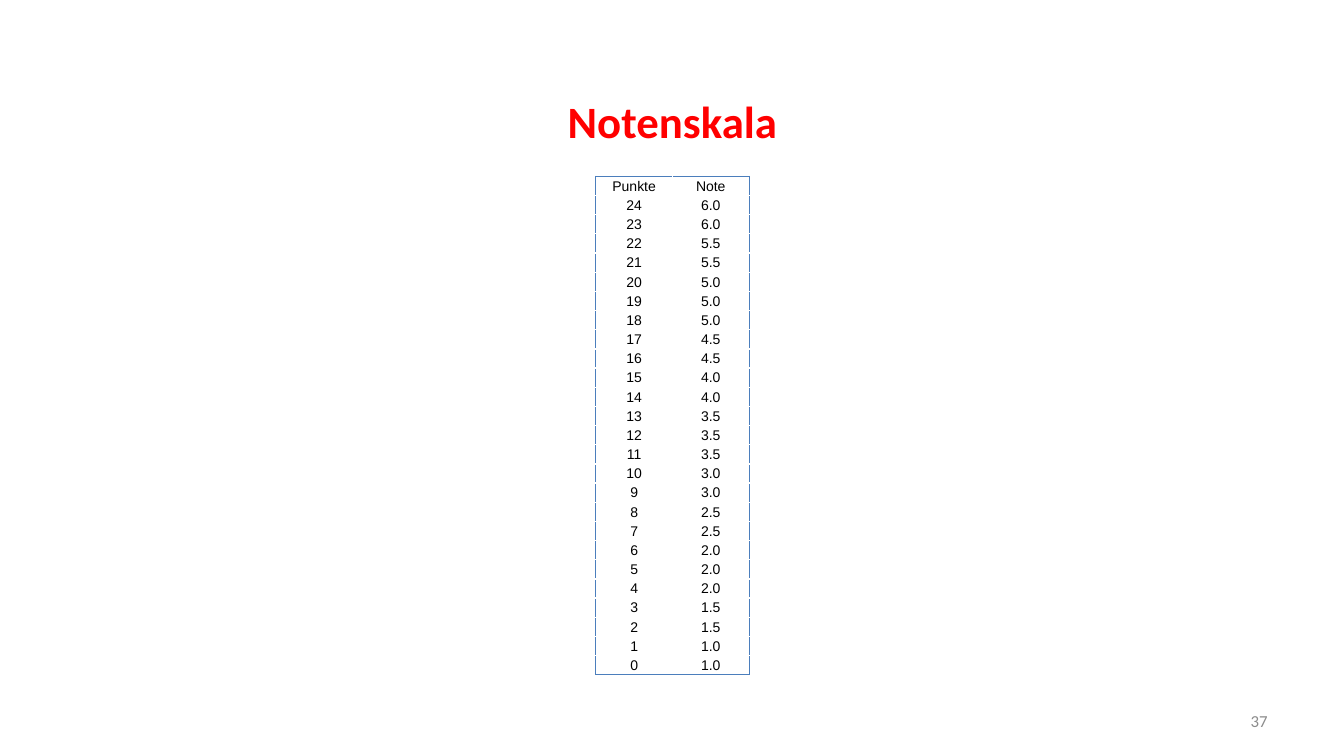
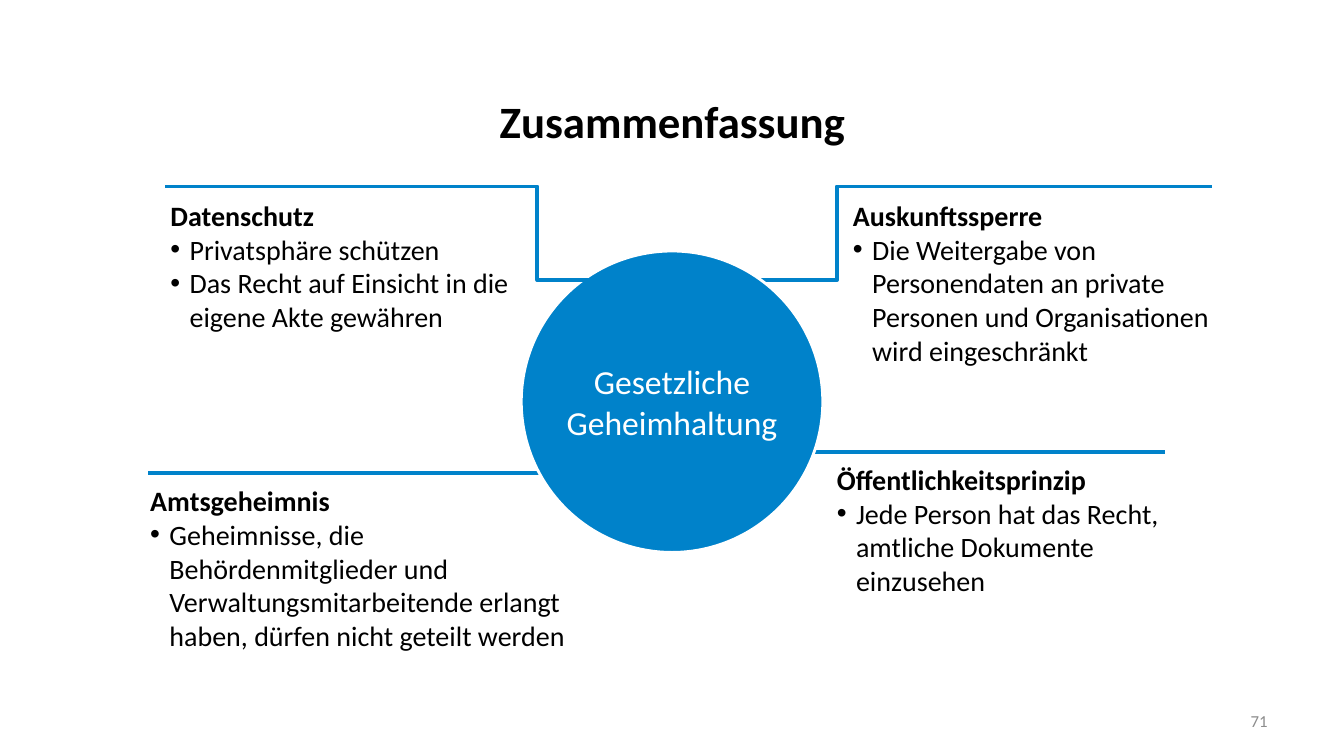
from dataclasses import dataclass

from lxml.etree import SubElement
from pptx import Presentation
from pptx.dml.color import RGBColor as RGB
from pptx.enum.shapes import MSO_CONNECTOR as LINK, MSO_SHAPE as SHAPE
from pptx.enum.text import MSO_ANCHOR as ANCHOR, MSO_AUTO_SIZE as FIT, PP_ALIGN as ALIGN
from pptx.oxml.ns import qn
from pptx.util import Pt

PX = 9144
COMPARISON_LAYOUT, TITLE_ONLY_LAYOUT = 4, 5


@dataclass(frozen=True)
class Theme:
    font: str = "Calibri"
    table_font: str = "Arial"
    black: str = "000000"
    white: str = "FFFFFF"
    red: str = "FF0000"
    blue: str = "0082CA"
    border: str = "4B7EBC"
    grey: str = "8C8C8C"
    title_size: int = 32
    hub_size: int = 24
    body_size: int = 20
    number_size: int = 12
    table_size: int = 10
    line_width: float = 2.75
    border_width: float = 0.75


THEME = Theme()

GRADES = [
    "6.0", "6.0", "5.5", "5.5", "5.0", "5.0", "5.0", "4.5", "4.5",
    "4.0", "4.0", "3.5", "3.5", "3.5", "3.0", "3.0", "2.5", "2.5",
    "2.0", "2.0", "2.0", "1.5", "1.5", "1.0", "1.0",
]

TOPICS = [
    ((159, 192, 366, 175), "Datenschutz",
     ["Privatsphäre schützen", "Das Recht auf Einsicht in die eigene Akte gewähren"]),
    ((836, 192, 382, 254), "Auskunftssperre",
     ["Die Weitergabe von Personendaten an private Personen und Organisationen "
      "wird eingeschränkt"]),
    ((139, 475, 457, 206), "Amtsgeheimnis",
     ["Geheimnisse, die Behördenmitglieder und Verwaltungsmitarbeitende erlangt "
      "haben, dürfen nicht geteilt werden"]),
    ((820, 454, 366, 175), "Öffentlichkeitsprinzip",
     ["Jede Person hat das Recht, amtliche Dokumente einzusehen"]),
]

LINKS_BEHIND_HUB = [
    (LINK.STRAIGHT, (147, 469, 576, 469)),
    (LINK.STRAIGHT, (730, 448, 1155, 448)),
    (LINK.ELBOW, (974, 185, 686, 278)),
]
LINKS_OVER_HUB = [
    (LINK.STRAIGHT, (874, 185, 1202, 185)),
    (LINK.ELBOW, (419, 185, 647, 278)),
    (LINK.STRAIGHT, (164, 185, 492, 185)),
]


def scaled(lengths):
    return [length * PX for length in lengths]


def place(shape, box):
    shape.left, shape.top, shape.width, shape.height = scaled(box)


def style_paragraph(paragraph, size, color, bold=False, align=ALIGN.LEFT, font=THEME.font):
    paragraph.alignment = align
    paragraph.space_before = Pt(0)
    for run in paragraph.runs:
        run.font.name = font
        run.font.size = Pt(size)
        run.font.bold = bold
        run.font.color.rgb = RGB.from_string(color)


def set_bullet(paragraph, bulleted):
    properties = paragraph._p.get_or_add_pPr()
    indent = 19 * PX if bulleted else 0
    properties.set("marL", str(indent))
    properties.set("indent", str(-indent))
    if bulleted:
        SubElement(properties, qn("a:buFont"), typeface="Arial")
        SubElement(properties, qn("a:buChar"), char="•")
    else:
        SubElement(properties, qn("a:buNone"))


def add_slide(deck, layout, title, title_color, number):
    slide = deck.slides.add_slide(deck.slide_layouts[layout])
    heading = slide.shapes.title
    place(heading, (67, 84, 1200, 71))
    heading.text_frame.text = title
    heading.text_frame.vertical_anchor = ANCHOR.MIDDLE
    style_paragraph(heading.text_frame.paragraphs[0], THEME.title_size, title_color,
                    bold=True, align=ALIGN.CENTER)

    footer = slide.shapes.add_textbox(*scaled((956, 695, 311, 40))).text_frame
    footer.word_wrap = True
    footer.vertical_anchor = ANCHOR.MIDDLE
    footer.text = str(number)
    style_paragraph(footer.paragraphs[0], THEME.number_size, THEME.grey, align=ALIGN.RIGHT)
    return slide


def fill_topic(holder, box, heading, points):
    place(holder, box)
    frame = holder.text_frame
    frame.text = "\n".join([heading, *points])
    frame.word_wrap = True
    frame.auto_size = FIT.NONE
    frame.vertical_anchor = ANCHOR.TOP
    for index, paragraph in enumerate(frame.paragraphs):
        set_bullet(paragraph, bulleted=index > 0)
        style_paragraph(paragraph, THEME.body_size, THEME.black, bold=index == 0)


def add_link(slide, kind, ends):
    link = slide.shapes.add_connector(kind, *scaled(ends))
    link.line.color.rgb = RGB.from_string(THEME.blue)
    link.line.width = Pt(THEME.line_width)
    SubElement(link._element.spPr, qn("a:effectLst"))


def add_hub(slide, box, label):
    hub = slide.shapes.add_shape(SHAPE.OVAL, *scaled(box))
    hub.shadow.inherit = False
    hub.fill.solid()
    hub.fill.fore_color.rgb = RGB.from_string(THEME.blue)
    hub.line.color.rgb = RGB.from_string(THEME.white)
    hub.line.width = Pt(2)
    frame = hub.text_frame
    frame.margin_left = frame.margin_right = frame.margin_top = frame.margin_bottom = 0
    frame.word_wrap = True
    frame.vertical_anchor = ANCHOR.MIDDLE
    frame.text = label
    style_paragraph(frame.paragraphs[0], THEME.hub_size, THEME.white, align=ALIGN.CENTER)


def set_borders(cell, sides):
    properties = cell._tc.get_or_add_tcPr()
    for side in sides:
        line = SubElement(properties, qn(f"a:ln{side}"), w=str(Pt(THEME.border_width)))
        fill = SubElement(line, qn("a:solidFill"))
        SubElement(fill, qn("a:srgbClr"), val=THEME.border)


def fill_cell(cell, text, sides):
    set_borders(cell, sides)
    cell.fill.background()
    cell.margin_left = cell.margin_right = cell.margin_top = PX
    cell.margin_bottom = 0
    cell.vertical_anchor = ANCHOR.MIDDLE
    cell.text_frame.text = text
    style_paragraph(cell.text_frame.paragraphs[0], THEME.table_size, THEME.black,
                    align=ALIGN.CENTER, font=THEME.table_font)


def add_grade_table(slide, box):
    top_score = len(GRADES) - 1
    entries = [("Punkte", "Note")]
    entries += [(str(top_score - index), grade) for index, grade in enumerate(GRADES)]
    table = slide.shapes.add_table(len(entries), 2, *scaled(box)).table
    table.first_row = table.horz_banding = False
    for row, entry in enumerate(entries):
        for column, text in enumerate(entry):
            sides = ["LR"[column]]
            if row == 0:
                sides.append("T")
            if row == len(entries) - 1:
                sides.append("B")
            fill_cell(table.cell(row, column), text, sides)


def build_grade_slide(deck):
    slide = add_slide(deck, TITLE_ONLY_LAYOUT, "Notenskala", THEME.red, 37)
    add_grade_table(slide, (591, 175, 152, 495))


def build_summary_slide(deck):
    slide = add_slide(deck, COMPARISON_LAYOUT, "Zusammenfassung", THEME.black, 71)
    for index, topic in enumerate(TOPICS, start=1):
        fill_topic(slide.placeholders[index], *topic)
    for link in LINKS_BEHIND_HUB:
        add_link(slide, *link)
    add_hub(slide, (517, 249, 299, 299), "Gesetzliche Geheimhaltung")
    for link in LINKS_OVER_HUB:
        add_link(slide, *link)


def main():
    deck = Presentation()
    deck.slide_width, deck.slide_height = scaled((1333, 750))
    build_grade_slide(deck)
    build_summary_slide(deck)
    deck.save("out.pptx")


if __name__ == "__main__":
    main()
